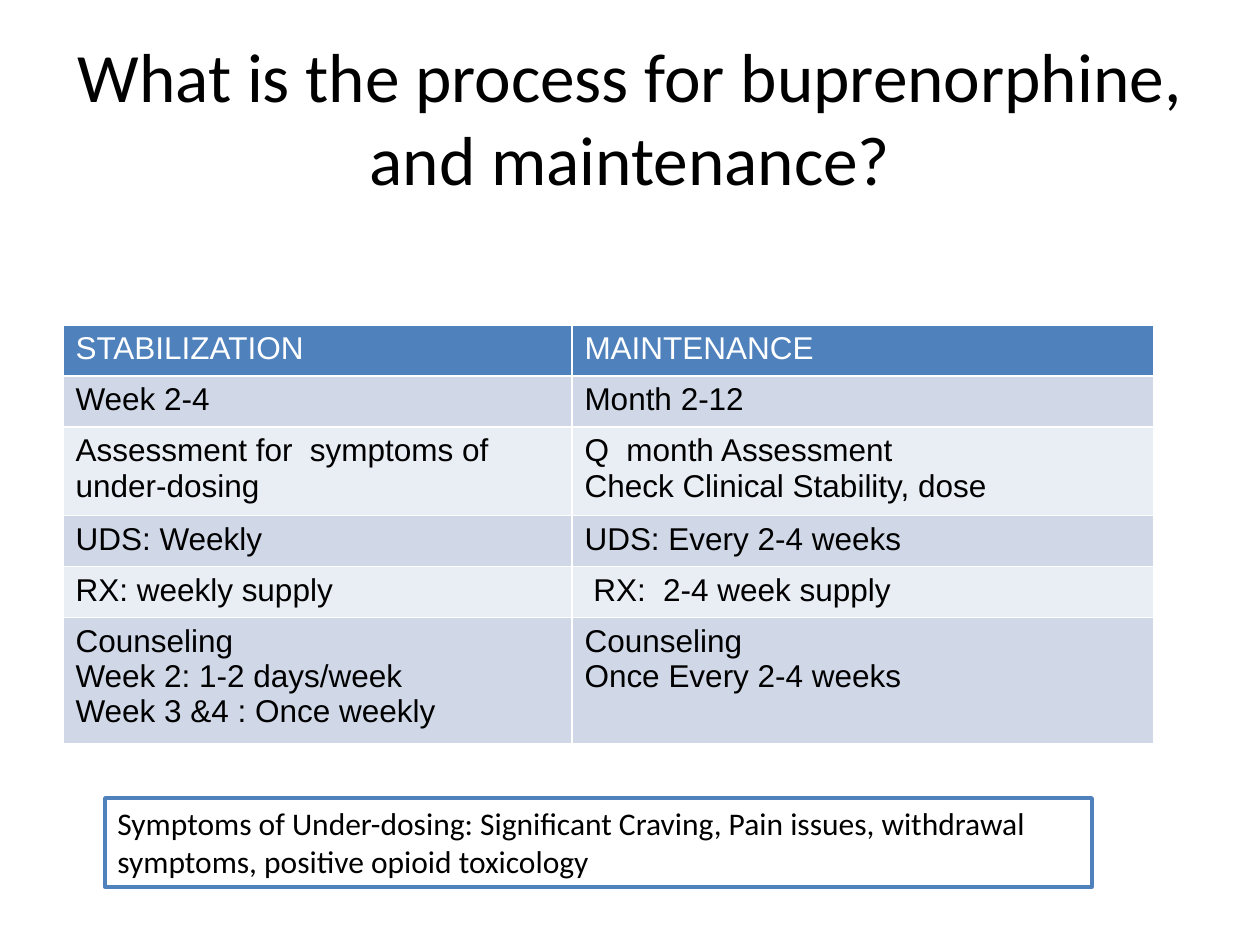
from pptx import Presentation
from pptx.dml.color import RGBColor
from pptx.enum.shapes import MSO_SHAPE
from pptx.enum.text import MSO_ANCHOR, PP_ALIGN
from pptx.util import Pt

RECT = MSO_SHAPE.RECTANGLE
MIDDLE, TOP = MSO_ANCHOR.MIDDLE, MSO_ANCHOR.TOP
CENTER, LEFT = PP_ALIGN.CENTER, PP_ALIGN.LEFT

SCALE = 914400 / 126
HUES = {"ink": "000000", "paper": "FFFFFF", "blue": "4F81BD",
        "band": "D0D8E8", "pale": "E9EDF4"}
TITLE = {"name": "Calibri", "size": Pt(39.6), "bold": False}
BODY = {"name": "Arial", "size": Pt(18), "bold": False}
NOTE = {"name": "Calibri", "size": Pt(18), "bold": False}

COLS = [509, 582]
ROWS = [
    (51, "STABILIZATION", "MAINTENANCE"),
    (51, "Week 2-4", "Month 2-12"),
    (84, "Assessment for  symptoms of  under-dosing",
     "Q  month Assessment\nCheck Clinical Stability, dose"),
    (51, "UDS: Weekly", "UDS: Every 2-4 weeks"),
    (51, "RX: weekly supply", " RX:  2-4 week supply"),
    (118, "Counseling\nWeek 2: 1-2 days/week\nWeek 3 &4 : Once weekly",
     "Counseling\nOnce Every 2-4 weeks"),
]


def px(n):
    """Turn pixels into EMU."""
    return round(n * SCALE)


def hue(name):
    """Look up a colour by its name."""
    return RGBColor.from_string(HUES[name])


def write(frame, text, font, ink="ink", align=LEFT):
    """Fill a text frame, one paragraph for each line."""
    frame.text = text
    for para in frame.paragraphs:
        para.alignment = align
        for run in para.runs:
            for key, value in font.items():
                setattr(run.font, key, value)
            run.font.color.rgb = hue(ink)


def add_title(slide, box, text):
    """Place the centred title in its box."""
    frame = slide.shapes.add_textbox(*map(px, box)).text_frame
    frame.word_wrap = True
    frame.vertical_anchor = MIDDLE
    write(frame, text, TITLE, align=CENTER)


def add_grid(slide, left, top):
    """Place the banded table of phases at a corner."""
    high = sum(row[0] for row in ROWS)
    box = (left, top, sum(COLS), high)
    grid = slide.shapes.add_table(len(ROWS), len(COLS), *map(px, box)).table
    for col, wide in zip(grid.columns, COLS):
        col.width = px(wide)
    for r, (tall, *texts) in enumerate(ROWS):
        grid.rows[r].height = px(tall)
        fill = "blue" if r == 0 else "band" if r % 2 else "pale"
        for c, text in enumerate(texts):
            cell = grid.cell(r, c)
            cell.fill.solid()
            cell.fill.fore_color.rgb = hue(fill)
            write(cell.text_frame, text, BODY, "ink" if r else "paper")


def add_note(slide, box, text):
    """Place the outlined note in its box."""
    shape = slide.shapes.add_shape(RECT, *map(px, box))
    shape.shadow.inherit = False
    shape.fill.background()
    shape.line.color.rgb = hue("blue")
    shape.line.width = Pt(2)
    shape.text_frame.word_wrap = True
    shape.text_frame.vertical_anchor = TOP
    write(shape.text_frame, text, NOTE)


def main():
    """Build the slide and save it."""
    deck = Presentation()
    deck.slide_width, deck.slide_height = px(1260), px(945)
    slide = deck.slides.add_slide(deck.slide_layouts[6])
    add_title(slide, (63, 38, 1134, 157),
              "What is the process for buprenorphine, and maintenance?")
    add_grid(slide, 63, 325)
    add_note(slide, (105, 798, 987, 89),
             "Symptoms of Under-dosing: Significant Craving, Pain issues, "
             "withdrawal symptoms, positive opioid toxicology")
    deck.save("out.pptx")


if __name__ == "__main__":
    main()
